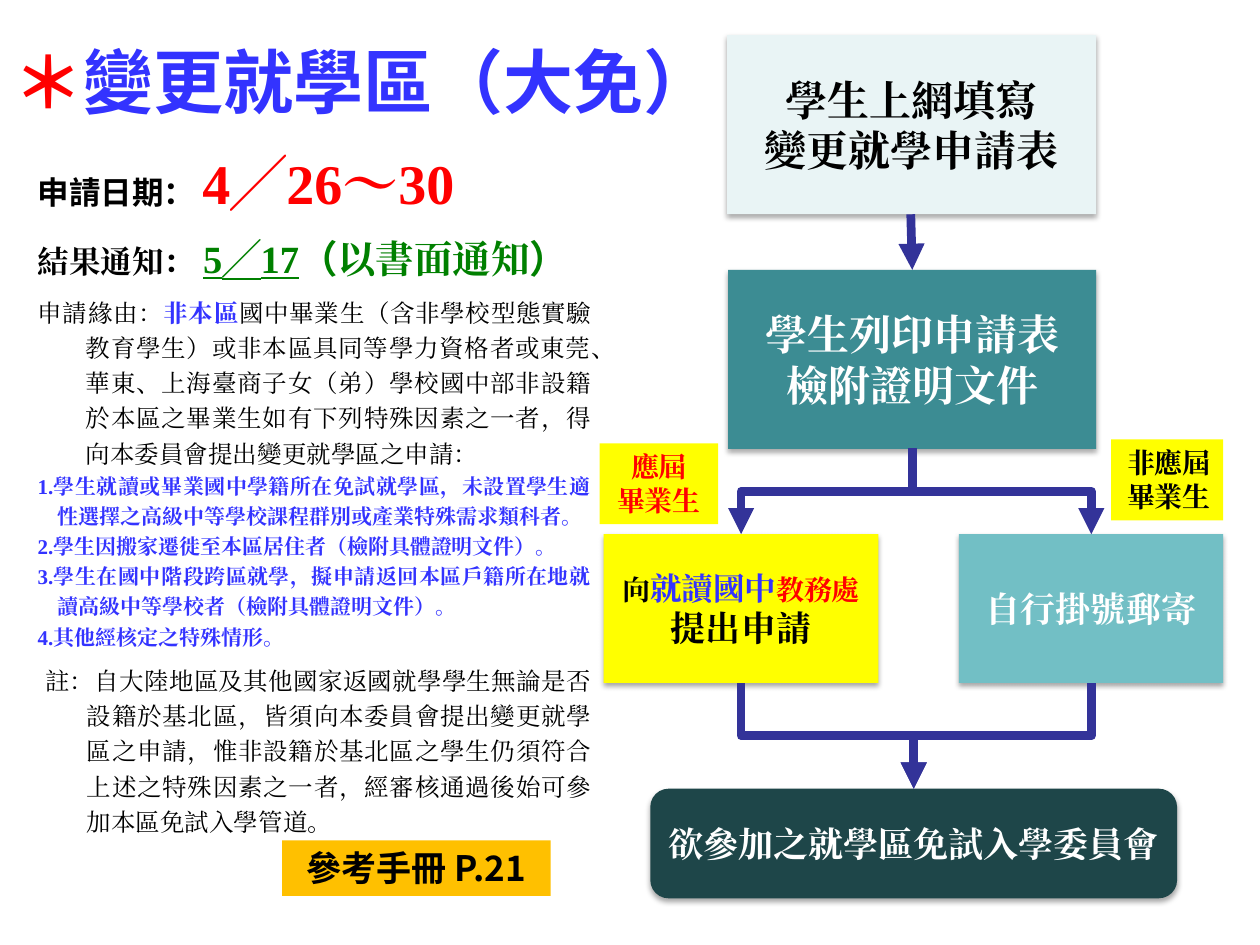
from dataclasses import dataclass
from typing import Optional

from lxml import etree
from pptx import Presentation
from pptx.dml.color import RGBColor as RGB
from pptx.enum.shapes import MSO_CONNECTOR as Conn, MSO_SHAPE as Geo
from pptx.enum.text import MSO_ANCHOR as Anchor, PP_ALIGN as Align
from pptx.oxml.ns import qn
from pptx.util import Cm, Pt

NOTO, TIMES = "Noto Sans CJK SC", "Times New Roman"
BLACK, WHITE = RGB(0, 0, 0), RGB(255, 255, 255)
RED, GREEN = RGB(255, 0, 0), RGB(0, 128, 0)
BLUE, NAVY = RGB(0x33, 0x33, 0xFF), RGB(0x33, 0x33, 0x99)
YELLOW, AMBER = RGB(255, 255, 0), RGB(255, 0xC0, 0)
PALE, TEAL = RGB(0xE9, 0xF4, 0xF5), RGB(0x3C, 0x8C, 0x93)
AQUA, DARK = RGB(0x72, 0xBF, 0xC5), RGB(0x1E, 0x46, 0x49)


@dataclass
class Span:
    text: str
    size: float
    color: RGB = BLACK
    bold: bool = True
    font: str = TIMES
    under: bool = False


@dataclass
class Para:
    spans: list[Span]
    align: Align = Align.CENTER
    margin: float = 0
    indent: float = 0
    before: float = 0
    lines: Optional[float] = None


@dataclass
class Box:
    left: float
    top: float
    width: float
    height: float
    fill: RGB
    paras: list[Para]
    shade: bool = True
    geo: Geo = Geo.RECTANGLE


@dataclass
class Link:
    x1: float
    y1: float
    x2: float
    y2: float


def write(frame, paras: list[Para], anchor: Anchor = Anchor.TOP) -> None:
    frame.word_wrap = True
    frame.vertical_anchor = anchor
    for i, item in enumerate(paras):
        para = frame.add_paragraph() if i else frame.paragraphs[0]
        para.alignment = item.align
        para.space_before = Pt(item.before)
        if item.lines:
            para.line_spacing = item.lines
        if item.margin:
            props = para._p.get_or_add_pPr()
            props.set("marL", str(Cm(item.margin)))
            props.set("indent", str(Cm(item.indent)))
        for span in item.spans:
            run = para.add_run()
            run.text = span.text
            font = run.font
            font.size, font.bold, font.name = Pt(span.size), span.bold, span.font
            font.color.rgb = span.color
            font.underline = span.under
            east = etree.SubElement(run._r.get_or_add_rPr(), qn("a:ea"))
            east.set("typeface", span.font)


def add_text(left: float, top: float, width: float, height: float,
             paras: list[Para], anchor: Anchor = Anchor.TOP):
    box = slide.shapes.add_textbox(Cm(left), Cm(top), Cm(width), Cm(height))
    write(box.text_frame, paras, anchor)
    return box.text_frame


def add_box(box: Box) -> None:
    shape = slide.shapes.add_shape(box.geo, Cm(box.left), Cm(box.top),
                                   Cm(box.width), Cm(box.height))
    shape.shadow.inherit = False
    shape.fill.solid()
    shape.fill.fore_color.rgb = box.fill
    shape.line.fill.background()
    if box.shade:
        glow = etree.SubElement(shape._element.spPr.find(qn("a:effectLst")),
                                qn("a:outerShdw"), blurRad=str(Pt(3.1)),
                                dist=str(Pt(1.8)), dir="5400000", rotWithShape="0")
        tint = etree.SubElement(glow, qn("a:srgbClr"), val="000000")
        etree.SubElement(tint, qn("a:alpha"), val="35000")
    write(shape.text_frame, box.paras, Anchor.MIDDLE if box.shade else Anchor.TOP)


def add_link(link: Link) -> None:
    """Draw an arrow downwards; an elbow is a turned sideways connector."""
    x1, y1, x2, y2 = link.x1, link.y1, link.x2, link.y2
    bent = abs(x2 - x1) > 0.1
    if bent:
        right = x2 > x1
        mid_x, mid_y = (x1 + x2) / 2, (y1 + y2) / 2
        wide, high = (y2 - y1) / 2, abs(x2 - x1) / 2
        side = wide if right else -wide
        x1, x2 = mid_x + side, mid_x - side
        y1, y2 = mid_y - high, mid_y + high
    line = slide.shapes.add_connector(Conn.ELBOW if bent else Conn.STRAIGHT,
                                      Cm(x1), Cm(y1), Cm(x2), Cm(y2))
    props = line._element.spPr
    if bent:
        props.find(qn("a:xfrm")).set("rot", "16200000" if right else "5400000")
    line.line.color.rgb = NAVY
    line.line.width = Pt(5)
    etree.SubElement(line.line._get_or_add_ln(), qn("a:tailEnd"), type="triangle")
    etree.SubElement(props, qn("a:effectLst"))


def body(spans: list[Span], margin: float = 0.97, indent: float = -0.97,
         before: float = 6) -> Para:
    return Para(spans, Align.JUSTIFY, margin, indent, before, 1.2)


def plain(size: float, color: RGB, *texts: str) -> list[Para]:
    return [Para([Span(text, size, color)]) for text in texts]


deck = Presentation()
deck.slide_width, deck.slide_height = Cm(25.4), Cm(19.05)
slide = deck.slides.add_slide(deck.slide_layouts[6])

# Title
title = add_text(0, 0.41, 14.66, 2.41, [Para([
    Span("＊", 40, RED, font=NOTO), Span("變更就學區（大免）", 40, BLUE, font=NOTO)])],
    Anchor.MIDDLE)
title.margin_left = title.margin_right = Cm(0.13)

# Dates, reasons and note
reasons = [
    "1.學生就讀或畢業國中學籍所在免試就學區，未設置學生適性選擇之高級中等學校課程群別或產業特殊需求類科者。",
    "2.學生因搬家遷徙至本區居住者（檢附具體證明文件）。",
    "3.學生在國中階段跨區就學，擬申請返回本區戶籍所在地就讀高級中等學校者（檢附具體證明文件）。",
    "4.其他經核定之特殊情形。",
]
add_text(0.51, 2.59, 11.66, 15.34, [
    body([Span("申請日期： ", 18, font=NOTO), Span("4", 32, RED),
          Span("╱", 32, RED, font=NOTO), Span("26～30", 32, RED)], before=0),
    body([Span("結果通知： ", 18), Span("5", 22, GREEN, under=True),
          Span("╱", 22, GREEN, font=NOTO, under=True),
          Span("17", 22, GREEN, under=True), Span("（", 22, GREEN, font=NOTO),
          Span("以書面通知", 22, GREEN), Span("）", 22, GREEN, font=NOTO)]),
    body([Span("申請緣由：", 14, bold=False), Span("非本區", 14, BLUE),
          Span("國中畢業生（含非學校型態實驗教育學生）或非本區具同等學力資格者或"
               "東莞、華東、上海臺商子女（弟）學校國中部非設籍於本區之畢業生如有"
               "下列特殊因素之一者，得向本委員會提出變更就學區之申請：", 14, bold=False)]),
    *[body([Span(text, 12, BLUE)], 0.41, -0.41, 0) for text in reasons],
    body([Span("註：自大陸地區及其他國家返國就學學生無論是否設籍於基北區，皆須向"
               "本委員會提出變更就學區之申請，惟非設籍於基北區之學生仍須符合上述之"
               "特殊因素之一者，經審核通過後始可參加本區免試入學管道。", 14, bold=False)],
         0.99, -0.84),
])

# Flow steps
steps = [
    Box(14.66, 0.71, 7.44, 3.61, PALE, plain(24, BLACK, "學生上網填寫", "變更就學申請表")),
    Box(14.68, 5.44, 7.42, 3.61, TEAL, plain(24, WHITE, "學生列印申請表", "檢附證明文件")),
    Box(12.17, 10.77, 5.54, 3, YELLOW, [Para([
        Span("向", 16), Span("就讀國中", 18, BLUE), Span("教務處", 16, RED),
        Span("提出申請", 20)])]),
    Box(19.33, 10.77, 5.33, 3, AQUA, plain(20, WHITE, "自行掛號郵寄")),
    Box(13.11, 15.9, 10.62, 2.21, DARK, plain(20, WHITE, "欲參加之就學區免試入學委員會"),
        geo=Geo.ROUNDED_RECTANGLE),
]
for step in steps:
    add_box(step)

# Arrows
for link in [Link(18.36, 4.32, 18.39, 5.44),
             Link(18.39, 9.04, 14.94, 10.77), Link(18.39, 9.04, 22, 10.77),
             Link(14.94, 13.77, 18.42, 15.9), Link(22, 13.77, 18.42, 15.9)]:
    add_link(link)

# Labels
late = plain(16, BLACK, "非應屆畢業生")
late[0].align = Align.RIGHT
for label in [
    Box(12.09, 8.94, 2.39, 1.63, YELLOW, plain(16, RED, "應屆", "畢業生"), False),
    Box(22.4, 8.86, 2.26, 1.63, YELLOW, late, False),
    Box(5.69, 16.94, 5.41, 1.12, AMBER, [Para([Span("參考手冊 P.21", 20, font=NOTO)])], False),
]:
    add_box(label)

deck.save("out.pptx")
